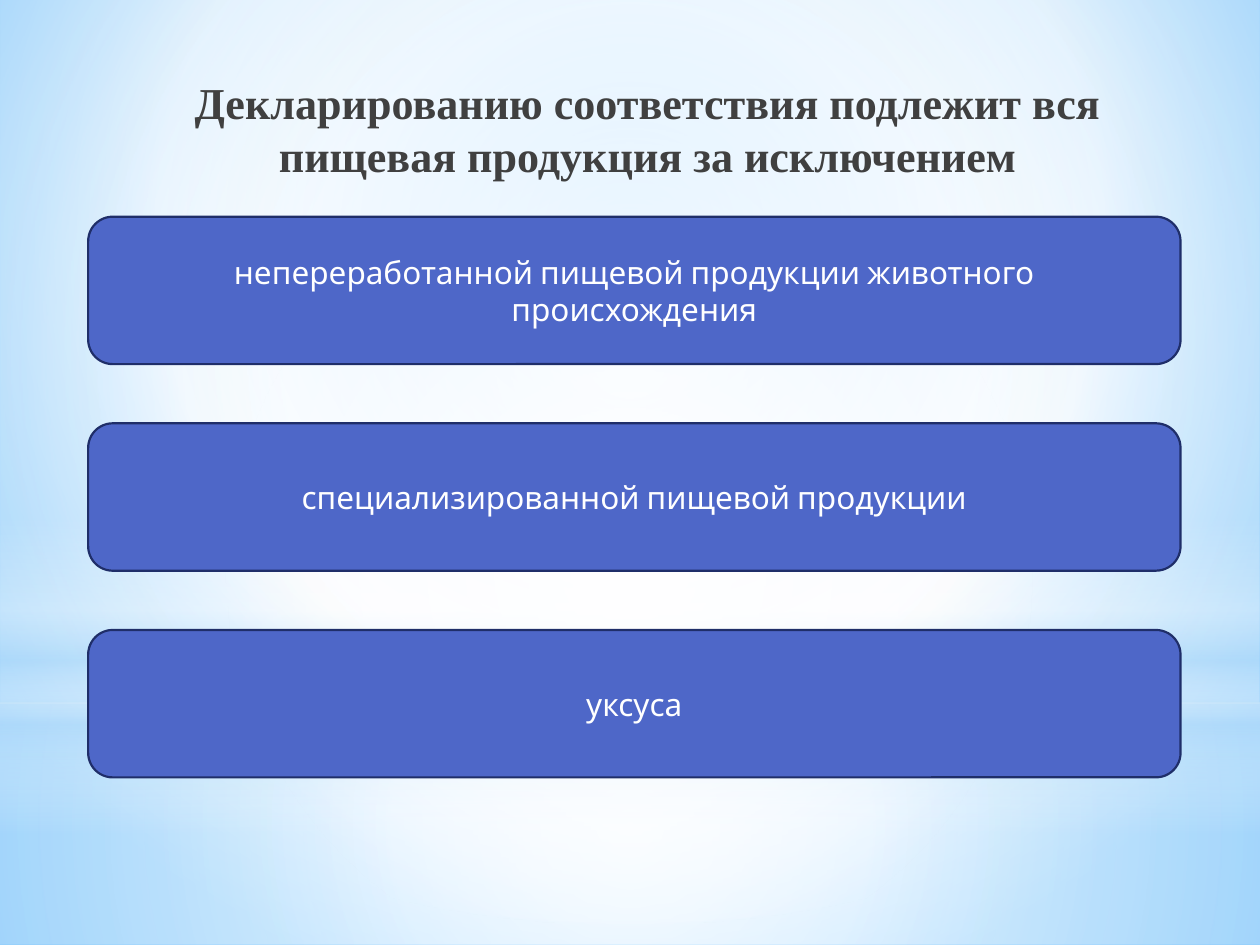
from lxml.etree import SubElement
from pptx import Presentation
from pptx.dml.color import RGBColor
from pptx.enum.shapes import MSO_SHAPE
from pptx.enum.text import MSO_ANCHOR, PP_ALIGN
from pptx.oxml.ns import qn
from pptx.util import Inches, Pt

# Content
TITLE = "Декларированию соответствия подлежит вся пищевая продукция за исключением"
EXCEPTIONS = [
    "непереработанной пищевой продукции животного происхождения",
    "специализированной пищевой продукции",
    "уксуса",
]

WHITE = RGBColor(0xFF, 0xFF, 0xFF)
SKY = RGBColor(0xB4, 0xDC, 0xFA)
LIGHT_BLUE = RGBColor(0x9E, 0xD5, 0xFF)
BRIGHT_BLUE = RGBColor(0x5B, 0xB9, 0xFF)
BOX_FILL = RGBColor(0x4E, 0x67, 0xC8)
BOX_LINE = RGBColor(0x1F, 0x2E, 0x69)
TITLE_GREY = RGBColor(0x40, 0x40, 0x40)

# Gradient stops: position %, colour, opacity %
PAGE_STOPS = [(0, LIGHT_BLUE, 100), (60, WHITE, 100), (100, BRIGHT_BLUE, 100)]
PAGE_FOCUS = (20, 10, 20, 60)
CENTRE = (50, 50, 50, 50)

# Background layers: shape, top, height, stops, focus (None = vertical)
LAYERS = [
    (MSO_SHAPE.RECTANGLE, 5.58, 1.92,
     [(0, WHITE, 91), (37, WHITE, 76), (100, SKY, 79)], CENTRE),
    (MSO_SHAPE.RECTANGLE, 0, 5.58,
     [(0, WHITE, 89), (48, WHITE, 62), (100, SKY, 79)], CENTRE),
    (MSO_SHAPE.RECTANGLE, 4.12, 2.5,
     [(0, WHITE, 0), (29, WHITE, 30), (45, SKY, 40), (55, WHITE, 26),
      (65, SKY, 60), (100, WHITE, 0)], None),
    (MSO_SHAPE.OVAL, 1.75, 5.58, [(0, WHITE, 100), (56, WHITE, 0)], CENTRE),
]

BOX_LEFT, BOX_TOP, BOX_WIDTH, BOX_HEIGHT, BOX_STEP = 0.7, 1.72, 8.67, 1.17, 1.64


def set_gradient(fill, owner, stops, focus):
    """Fill with a circular gradient around focus, or a vertical one."""
    fill.gradient()
    grad = owner.find(".//" + qn("a:gradFill"))
    for child in list(grad):
        grad.remove(child)
    stop_list = SubElement(grad, qn("a:gsLst"))
    for position, color, opacity in stops:
        stop = SubElement(stop_list, qn("a:gs"), pos=str(position * 1000))
        rgb = SubElement(stop, qn("a:srgbClr"), val=str(color))
        if opacity < 100:
            SubElement(rgb, qn("a:alpha"), val=str(opacity * 1000))
    if focus:
        circle = SubElement(grad, qn("a:path"), path="circle")
        sides = {side: str(v * 1000) for side, v in zip("ltrb", focus)}
        SubElement(circle, qn("a:fillToRect"), **sides)
    else:
        SubElement(grad, qn("a:lin"), ang="5400000", scaled="0")


def write(tf, text, font, size, color):
    tf.word_wrap = True
    p = tf.paragraphs[0]
    p.text = text
    p.alignment = PP_ALIGN.CENTER
    p.font.name, p.font.size = font, Pt(size)
    p.font.color.rgb = color
    return p


prs = Presentation()
prs.slide_width, prs.slide_height = Inches(10), Inches(7.5)
s = prs.slides.add_slide(prs.slide_layouts[6])

# Background
set_gradient(s.background.fill, s.background._cSld, PAGE_STOPS, PAGE_FOCUS)
for kind, top, height, stops, focus in LAYERS:
    sp = s.shapes.add_shape(kind, 0, Inches(top), prs.slide_width, Inches(height))
    sp.shadow.inherit = False
    sp.line.fill.background()
    set_gradient(sp.fill, sp._element, stops, focus)

# Title
tb = s.shapes.add_textbox(Inches(0.51), Inches(0.55), Inches(9.06), Inches(0.68))
p = write(tb.text_frame, TITLE, "Times New Roman", 25.2, TITLE_GREY)
p.font.bold = True
p._p.get_or_add_pPr().set("marL", str(Inches(0.2)))

# Exception boxes
for i, text in enumerate(EXCEPTIONS):
    sp = s.shapes.add_shape(
        MSO_SHAPE.ROUNDED_RECTANGLE, Inches(BOX_LEFT), Inches(BOX_TOP + i * BOX_STEP),
        Inches(BOX_WIDTH), Inches(BOX_HEIGHT))
    sp.shadow.inherit = False
    sp.fill.solid()
    sp.fill.fore_color.rgb = BOX_FILL
    sp.line.color.rgb = BOX_LINE
    sp.line.width = Pt(1.25)
    sp.text_frame.vertical_anchor = MSO_ANCHOR.MIDDLE
    write(sp.text_frame, text, "Cabin", 18, WHITE)

prs.save("out.pptx")
